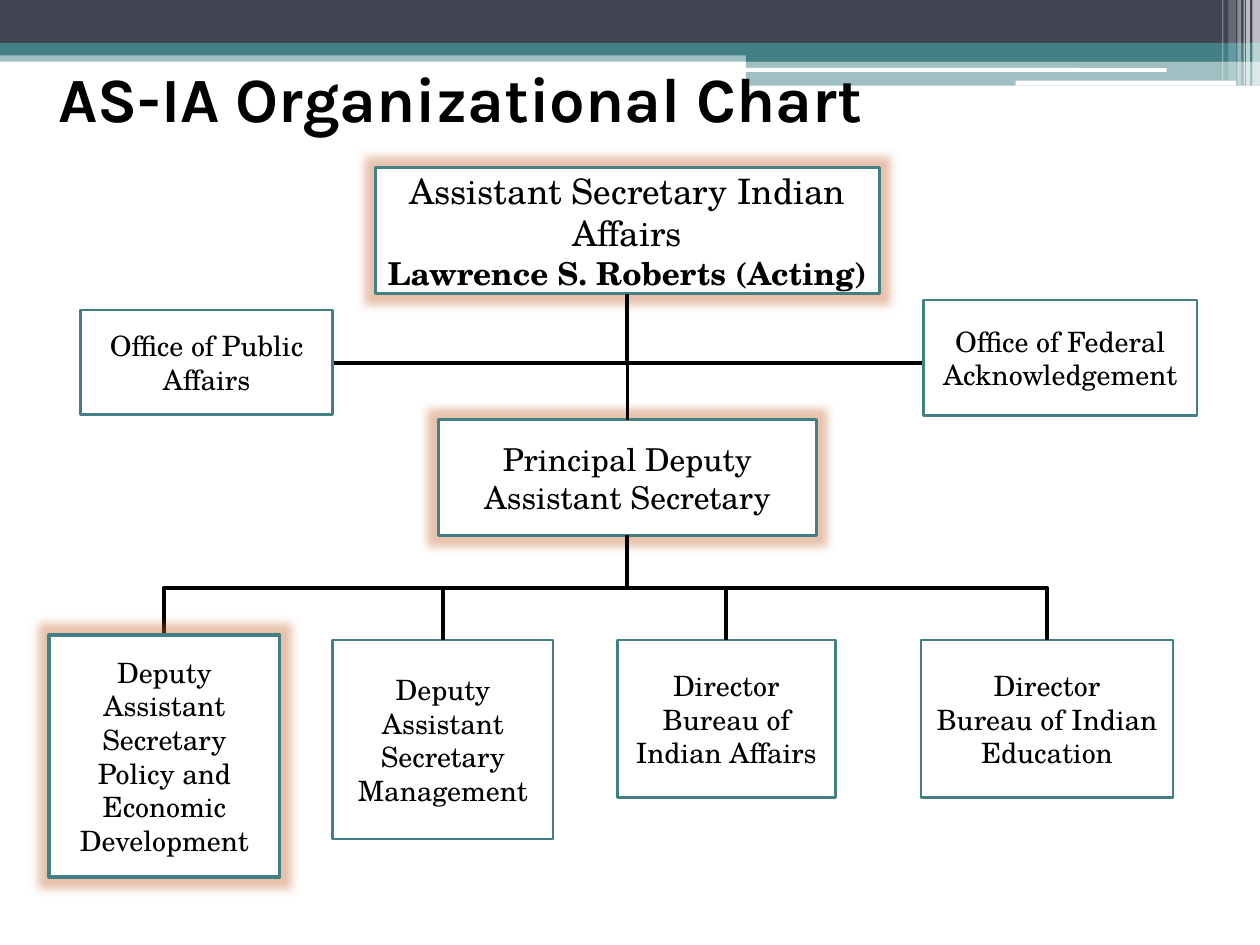
from dataclasses import dataclass

from lxml import etree
from pptx import Presentation
from pptx.dml.color import RGBColor
from pptx.enum.shapes import MSO_CONNECTOR, MSO_SHAPE
from pptx.enum.text import MSO_ANCHOR, PP_ALIGN
from pptx.oxml.ns import qn
from pptx.util import Inches, Pt

RECT = MSO_SHAPE.RECTANGLE
ROUNDED = MSO_SHAPE.ROUNDED_RECTANGLE
PROCESS = MSO_SHAPE.FLOWCHART_PROCESS
STRAIGHT = MSO_CONNECTOR.STRAIGHT
ELBOW = MSO_CONNECTOR.ELBOW
CENTER = PP_ALIGN.CENTER
MIDDLE = MSO_ANCHOR.MIDDLE

COLORS = {
    "teal": "438086",
    "slate": "424456",
    "white": "FFFFFF",
    "black": "000000",
    "glow": "C4652D",
}
BODY_FONT = "TeX Gyre Schola"
TITLE_FONT = "Karla"
TRUNK_X = 4.98
CHIEF_BOTTOM = 2.33
DEPUTY_TOP = 3.33
DEPUTY_BOTTOM = 4.25
BRANCH_TOP = 5.08
OFFICE_Y = 2.88


@dataclass
class Band:
    left: float
    top: float
    width: float
    height: float
    color: str
    alpha: int = 100
    kind: int = RECT


@dataclass
class Box:
    left: float
    top: float
    width: float
    height: float
    lines: list[str]
    size: int = 16
    glow: bool = False
    border: float = 1.5


BANDS = [
    Band(0, 0.4, 10, 0.09, "teal", 50),
    Band(0, 0, 10, 0.34, "slate"),
    Band(0, 0.34, 10, 0.1, "teal"),
    Band(5.92, 0.39, 4.08, 0.1, "teal"),
    Band(5.92, 0.48, 4.08, 0.2, "teal", 50),
    Band(5.91, 0.54, 3.35, 0.03, "white", kind=ROUNDED),
    Band(8.06, 0.64, 1.75, 0.04, "white", kind=ROUNDED),
    Band(9.94, 0, 0.06, 0.68, "white", 65),
    Band(9.89, 0, 0.03, 0.68, "white", 65),
    Band(9.87, 0, 0.01, 0.68, "white", 60),
    Band(9.82, 0, 0.03, 0.68, "white", 40),
    Band(9.75, 0, 0.06, 0.64, "white", 20),
    Band(9.7, 0, 0.01, 0.64, "white", 30),
]

CHIEF = Box(2.98, 1.33, 4, 1,
            ["Assistant Secretary Indian Affairs", "Lawrence S. Roberts (Acting)"], 20, True)
DEPUTY = Box(3.48, DEPUTY_TOP, 3, 0.92, ["Principal Deputy Assistant Secretary"], 18, True)
BRANCHES = [
    Box(2.64, BRANCH_TOP, 1.75, 1.58, ["Deputy Assistant Secretary Management"]),
    Box(4.9, BRANCH_TOP, 1.73, 1.25, ["Director", "Bureau of Indian Affairs"]),
    Box(7.31, BRANCH_TOP, 2, 1.25, ["Director", "Bureau of Indian Education"]),
]
POLICY = Box(0.39, 5.04, 1.83, 1.92,
             ["Deputy Assistant Secretary Policy and Economic Development"], glow=True, border=2)
OFFICES = [
    Box(0.64, 2.46, 2, 0.83, ["Office of Public Affairs"]),
    Box(7.33, 2.38, 2.17, 0.92, ["Office of Federal Acknowledgement"]),
]


def rgb(name: str) -> RGBColor:
    return RGBColor.from_string(COLORS[name])


def add_alpha(color, percent: int) -> None:
    etree.SubElement(color, qn("a:alpha"), val=str(percent * 1000))


def add_filled(s, kind: int, item: Band | Box, color: str):
    sp = s.shapes.add_shape(kind, Inches(item.left), Inches(item.top),
                            Inches(item.width), Inches(item.height))
    sp.shadow.inherit = False
    sp.fill.solid()
    sp.fill.fore_color.rgb = rgb(color)
    return sp


def add_band(s, band: Band) -> None:
    sp = add_filled(s, band.kind, band, band.color)
    sp.line.fill.background()
    if band.alpha < 100:
        add_alpha(sp._element.spPr.find(".//" + qn("a:srgbClr")), band.alpha)


def format_run(r, font: str, size: int, bold: bool) -> None:
    r.font.name = font
    r.font.size = Pt(size)
    r.font.bold = bold
    r.font.color.rgb = rgb("black")


def add_box(s, box: Box) -> None:
    sp = add_filled(s, PROCESS, box, "white")
    sp.line.color.rgb = rgb("teal")
    sp.line.width = Pt(box.border)
    if box.glow:
        effects = sp._element.spPr.find(qn("a:effectLst"))
        glow = etree.SubElement(effects, qn("a:glow"), rad=str(Pt(11)))
        add_alpha(etree.SubElement(glow, qn("a:srgbClr"), val=COLORS["glow"]), 40)
    tf = sp.text_frame
    tf.word_wrap = True
    tf.vertical_anchor = MIDDLE
    tf.text = "\n".join(box.lines)
    for p in tf.paragraphs:
        p.alignment = CENTER
        named = p.text == CHIEF.lines[1]
        format_run(p.runs[0], BODY_FONT, 18 if named else box.size, named)


def add_line(s, kind: int, x1: float, y1: float, x2: float, y2: float):
    c = s.shapes.add_connector(kind, Inches(x1), Inches(y1), Inches(x2), Inches(y2))
    c.line.color.rgb = rgb("black")
    c.line.width = Pt(2.25)
    etree.SubElement(c._element.spPr, qn("a:effectLst"))
    return c


def add_branch_line(s, x: float) -> None:
    mid_x, mid_y = (TRUNK_X + x) / 2, (DEPUTY_BOTTOM + BRANCH_TOP) / 2
    half_span = abs(x - TRUNK_X) / 2
    half_drop = (BRANCH_TOP - DEPUTY_BOTTOM) / 2
    side = 1 if x > TRUNK_X else -1
    c = add_line(s, ELBOW, mid_x + side * half_drop, mid_y - half_span,
                 mid_x - side * half_drop, mid_y + half_span)
    degrees = 270 if side > 0 else 90
    c._element.spPr.find(qn("a:xfrm")).set("rot", str(degrees * 60000))


def add_office_line(s, x: float) -> None:
    c = add_line(s, ELBOW, x, OFFICE_Y, TRUNK_X, CHIEF_BOTTOM)
    c._element.spPr.find(qn("a:prstGeom")).set("prst", "bentConnector2")


def add_title(s, text: str) -> None:
    tf = s.shapes.add_textbox(0, Inches(0.42), Inches(7.31), Inches(0.71)).text_frame
    tf.word_wrap = True
    tf.text = text
    p = tf.paragraphs[0]
    p.alignment = CENTER
    format_run(p.runs[0], TITLE_FONT, 36, True)


def main() -> None:
    prs = Presentation()
    prs.slide_width, prs.slide_height = Inches(10), Inches(7.5)
    s = prs.slides.add_slide(prs.slide_layouts[6])
    for band in BANDS:
        add_band(s, band)
    for box in [CHIEF, DEPUTY, *BRANCHES]:
        add_box(s, box)
    for box in [POLICY, *BRANCHES]:
        add_branch_line(s, box.left + box.width / 2)
    for x in (TRUNK_X - 2.5, TRUNK_X + 2.5):
        add_office_line(s, x)
    add_line(s, STRAIGHT, TRUNK_X, CHIEF_BOTTOM, TRUNK_X, DEPUTY_TOP)
    for box in [POLICY, *OFFICES]:
        add_box(s, box)
    add_title(s, "AS-IA Organizational Chart")
    prs.save("out.pptx")


if __name__ == "__main__":
    main()
